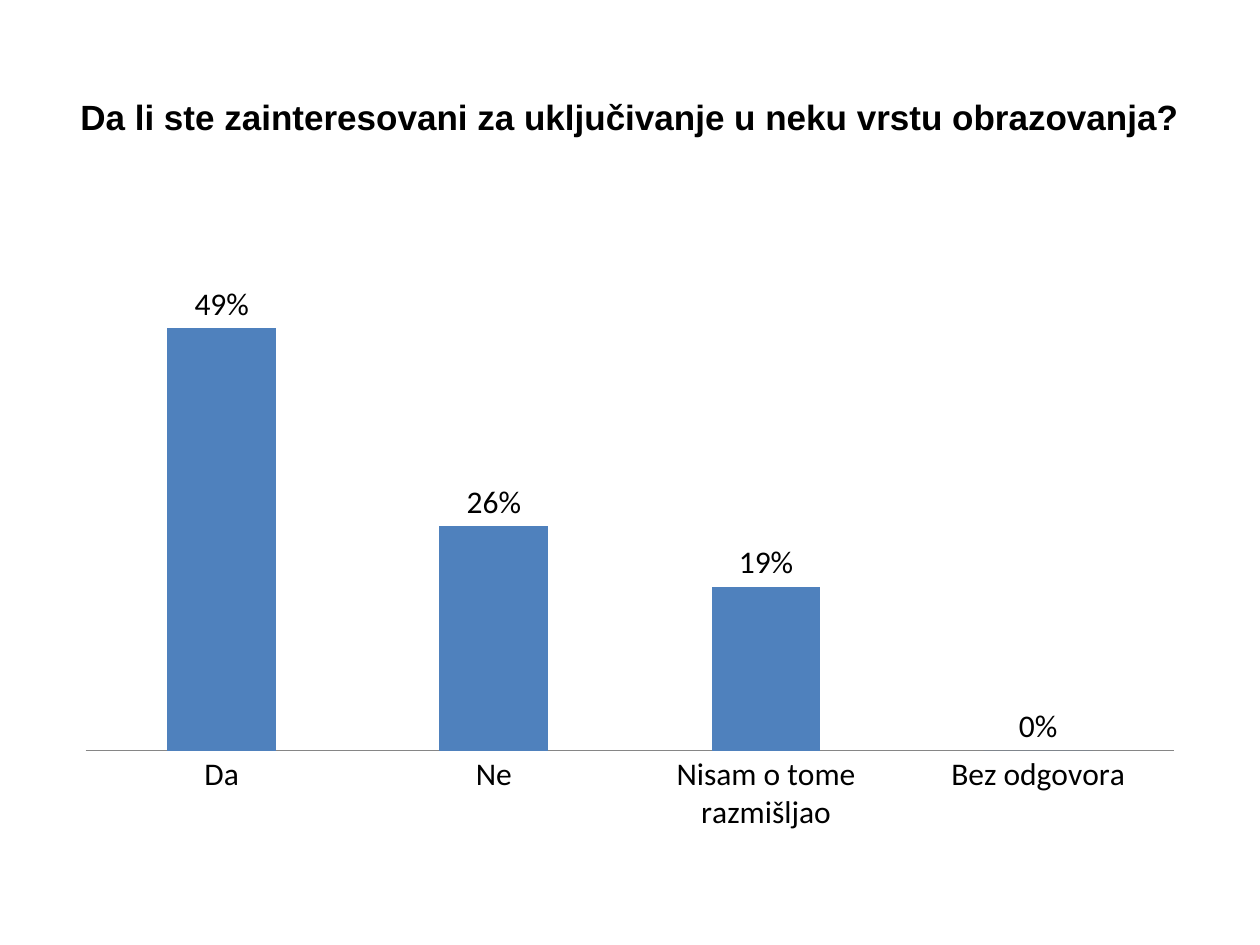
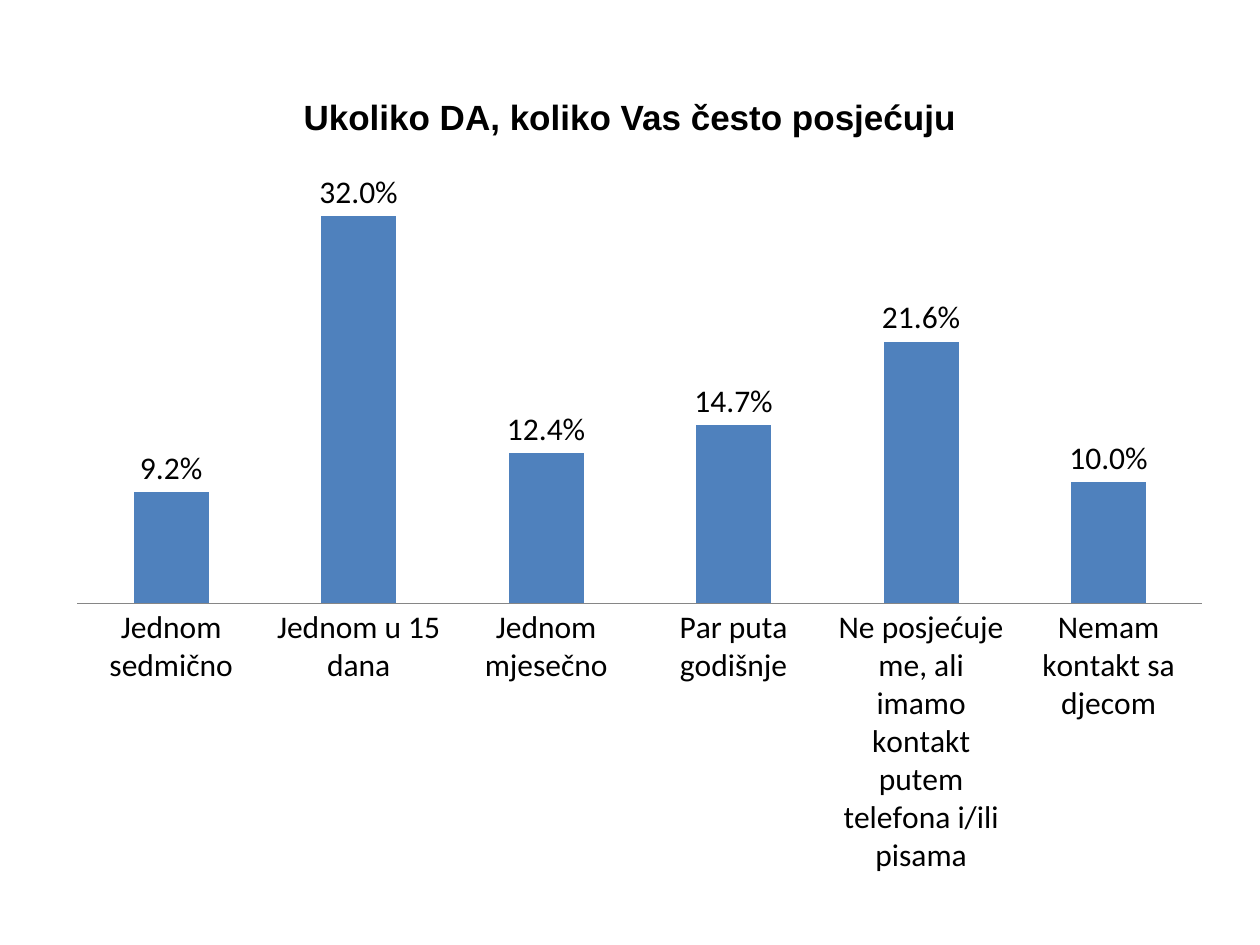
from dataclasses import dataclass

from pptx import Presentation, util as u
from pptx.chart.data import CategoryChartData
from pptx.dml.color import RGBColor
from pptx.enum import chart as charts, text
from pptx.slide import Slide

# Shared look
BLACK, BAR_BLUE, AXIS_GREY = "000000", "4F81BD", "868686"
TITLE_FONT, CHART_FONT = "Arial", "Calibri"


@dataclass(frozen=True)
class Box:
    """Left, top, width and height in centimetres."""
    left: float
    top: float
    width: float
    height: float

    def lengths(self) -> tuple[u.Cm, ...]:
        return tuple(u.Cm(x) for x in (self.left, self.top, self.width, self.height))


@dataclass(frozen=True)
class Question:
    title: str
    answers: dict[str, float]
    box: Box
    number_format: str
    maximum: float


TITLE_BOX = Box(1.27, 0.76, 22.86, 3.18)

QUESTIONS = [
    Question(
        "Da li ste zainteresovani za uključivanje u neku vrstu obrazovanja?",
        {"Da": 0.49, "Ne": 0.26, "Nisam o tome razmišljao": 0.19, "Bez odgovora": 0},
        Box(1.27, 4.45, 22.86, 12.57), "0%", 0.6,
    ),
    Question(
        "Ukoliko DA, koliko Vas često posjećuju",
        {
            "Jednom sedmično": 0.092,
            "Jednom u 15 dana": 0.32,
            "Jednom mjesečno": 0.124,
            "Par puta godišnje": 0.147,
            "Ne posjećuje me, ali imamo kontakt putem telefona i/ili pisama": 0.216,
            "Nemam kontakt sa djecom": 0.1,
        },
        Box(1.09, 3.33, 23.62, 14.6), "0.0%", 0.35,
    ),
]


def color(value: str) -> RGBColor:
    return RGBColor.from_string(value)


def format_font(font, *, name: str, size: float, fill: str = BLACK, bold: bool = False) -> None:
    font.name, font.size, font.bold = name, u.Pt(size), bold
    font.color.rgb = color(fill)


def add_text(slide: Slide, content: str, box: Box, *, align=text.PP_ALIGN.CENTER,
             anchor=text.MSO_ANCHOR.MIDDLE, **font_format) -> None:
    frame = slide.shapes.add_textbox(*box.lengths()).text_frame
    frame.word_wrap = True
    frame.vertical_anchor = anchor
    paragraph = frame.paragraphs[0]
    paragraph.alignment = align
    run = paragraph.add_run()
    run.text = content
    format_font(run.font, **font_format)


def add_answer_chart(slide: Slide, question: Question) -> None:
    data = CategoryChartData(number_format=question.number_format)
    data.categories = list(question.answers)
    data.add_series("Series 1", list(question.answers.values()))
    chart = slide.shapes.add_chart(
        charts.XL_CHART_TYPE.COLUMN_CLUSTERED, *question.box.lengths(), data
    ).chart
    chart.has_legend = chart.has_title = False
    format_font(chart.font, name=CHART_FONT, size=18)

    # Bars and their labels
    plot = chart.plots[0]
    plot.gap_width = 150
    plot.vary_by_categories = False
    bars = plot.series[0].format.fill
    bars.solid()
    bars.fore_color.rgb = color(BAR_BLUE)
    plot.has_data_labels = True
    labels = plot.data_labels
    labels.show_value = True
    labels.number_format = question.number_format
    labels.number_format_is_linked = False
    labels.position = charts.XL_LABEL_POSITION.OUTSIDE_END

    # Only the category axis shows
    category_axis, value_axis = chart.category_axis, chart.value_axis
    category_axis.major_tick_mark = charts.XL_TICK_MARK.NONE
    category_axis.format.line.color.rgb = color(AXIS_GREY)
    category_axis.format.line.width = u.Pt(0.75)
    value_axis.minimum_scale, value_axis.maximum_scale = 0, question.maximum
    value_axis.has_major_gridlines = False
    value_axis.visible = False


def main() -> None:
    presentation = Presentation()
    presentation.slide_width, presentation.slide_height = u.Cm(25.4), u.Cm(19.05)
    blank_layout = presentation.slide_layouts[6]
    for question in QUESTIONS:
        slide = presentation.slides.add_slide(blank_layout)
        add_text(slide, question.title, TITLE_BOX, name=TITLE_FONT, size=20, bold=True)
        add_answer_chart(slide, question)
    presentation.save("out.pptx")


if __name__ == "__main__":
    main()
